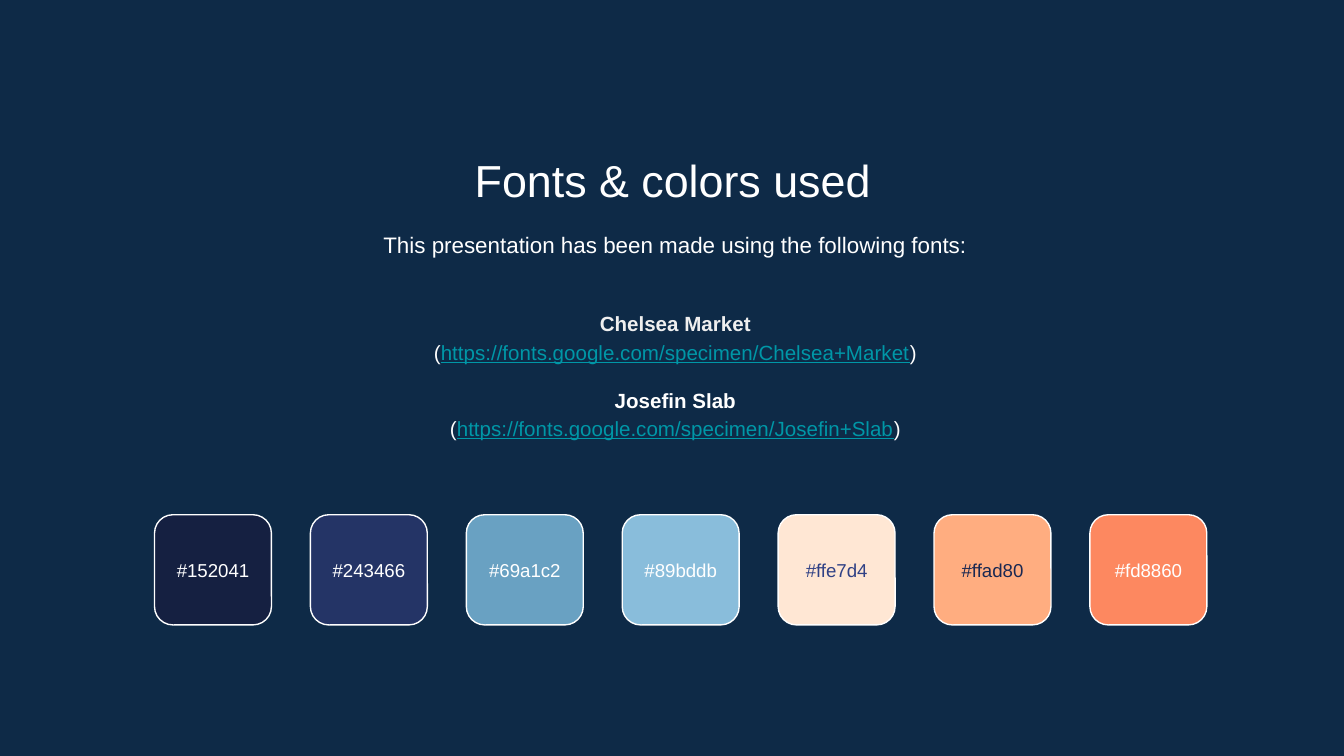
from dataclasses import dataclass

from pptx import Presentation
from pptx.dml.color import RGBColor
from pptx.enum.shapes import MSO_SHAPE
from pptx.enum.text import MSO_ANCHOR, PP_ALIGN
from pptx.slide import Slide
from pptx.util import Inches, Pt

ROUNDED = MSO_SHAPE.ROUNDED_RECTANGLE
TOP = MSO_ANCHOR.TOP
MIDDLE = MSO_ANCHOR.MIDDLE
CENTER = PP_ALIGN.CENTER

FONT = "Arial"
COLORS = {
    "background": "0E2A47",
    "white": "FFFFFF",
    "light gray": "EFEFEF",
    "link": "0097A7",
    "indigo": "304185",
    "navy": "1A2852",
}
SLIDE_WIDTH = 10
SLIDE_HEIGHT = SLIDE_WIDTH * 9 / 16
SWATCH_LEFT, SWATCH_TOP, SWATCH_PITCH = 1.15, 3.83, 1.16
SWATCH_WIDTH, SWATCH_HEIGHT = 0.87, 0.82
LABEL_TOP, LABEL_HEIGHT = 4, 0.48


@dataclass(frozen=True)
class Span:
    text: str
    size: float
    color: str = "white"
    bold: bool = False
    underline: bool = False


@dataclass(frozen=True)
class Line:
    spans: tuple[Span, ...]
    space_before: float = 0


@dataclass(frozen=True)
class Area:
    left: float
    top: float
    width: float
    height: float

    def lengths(self) -> tuple[int, ...]:
        return tuple(Inches(value) for value in (self.left, self.top, self.width, self.height))


@dataclass(frozen=True)
class Swatch:
    code: str
    label_color: str = "white"


SWATCHES = (
    Swatch("#152041"),
    Swatch("#243466"),
    Swatch("#69a1c2"),
    Swatch("#89bddb"),
    Swatch("#ffe7d4", "indigo"),
    Swatch("#ffad80", "navy"),
    Swatch("#fd8860"),
)


def rgb(name: str) -> RGBColor:
    return RGBColor.from_string(COLORS[name])


def add_text(slide: Slide, area: Area, lines: list[Line],
             anchor: MSO_ANCHOR = TOP, line_spacing: float = 1.0) -> None:
    frame = slide.shapes.add_textbox(*area.lengths()).text_frame
    frame.word_wrap = True
    frame.vertical_anchor = anchor
    frame.margin_left = frame.margin_right = Inches(0.1)
    frame.margin_top = frame.margin_bottom = Inches(0.1)
    for index, line in enumerate(lines):
        para = frame.add_paragraph() if index else frame.paragraphs[0]
        para.alignment = CENTER
        para.line_spacing = line_spacing
        if line.space_before:
            para.space_before = Pt(line.space_before)
        for span in line.spans:
            run = para.add_run()
            run.text = span.text
            run.font.name = FONT
            run.font.size = Pt(span.size)
            run.font.bold = span.bold
            run.font.underline = span.underline
            run.font.color.rgb = rgb(span.color)


def font_lines(name: str, address: str, color: str = "white", space_before: float = 0) -> list[Line]:
    link = Span(address, 11, "link", underline=True)
    return [
        Line((Span(name, 11, color, bold=True),), space_before),
        Line((Span("(", 11), link, Span(")", 11))),
    ]


def add_swatch(slide: Slide, left: float, swatch: Swatch) -> None:
    tile_area = Area(left, SWATCH_TOP, SWATCH_WIDTH, SWATCH_HEIGHT)
    tile = slide.shapes.add_shape(ROUNDED, *tile_area.lengths())
    tile.shadow.inherit = False
    tile.fill.solid()
    tile.fill.fore_color.rgb = RGBColor.from_string(swatch.code[1:].upper())
    tile.line.color.rgb = rgb("white")
    tile.line.width = Pt(0.75)
    label_area = Area(left, LABEL_TOP, SWATCH_WIDTH, LABEL_HEIGHT)
    add_text(slide, label_area, [Line((Span(swatch.code, 10, swatch.label_color),))], MIDDLE)


def main() -> None:
    deck = Presentation()
    deck.slide_width, deck.slide_height = Inches(SLIDE_WIDTH), Inches(SLIDE_HEIGHT)
    slide = deck.slides.add_slide(deck.slide_layouts[6])
    slide.background.fill.solid()
    slide.background.fill.fore_color.rgb = rgb("background")

    add_text(slide, Area(1.15, 1.04, 7.71, 0.53), [Line((Span("Fonts & colors used", 24),))])
    intro = Span("This presentation has been made using the following fonts:", 12)
    add_text(slide, Area(1.17, 1.59, 7.71, 0.48), [Line((intro,))], line_spacing=1.15)
    fonts = font_lines("Chelsea Market", "https://fonts.google.com/specimen/Chelsea+Market", "light gray")
    fonts += font_lines("Josefin Slab", "https://fonts.google.com/specimen/Josefin+Slab", space_before=10.6)
    add_text(slide, Area(1.17, 2.1, 7.71, 1.37), fonts, MIDDLE, 1.15)

    for index, swatch in enumerate(SWATCHES):
        add_swatch(slide, SWATCH_LEFT + index * SWATCH_PITCH, swatch)
    deck.save("out.pptx")


if __name__ == "__main__":
    main()
